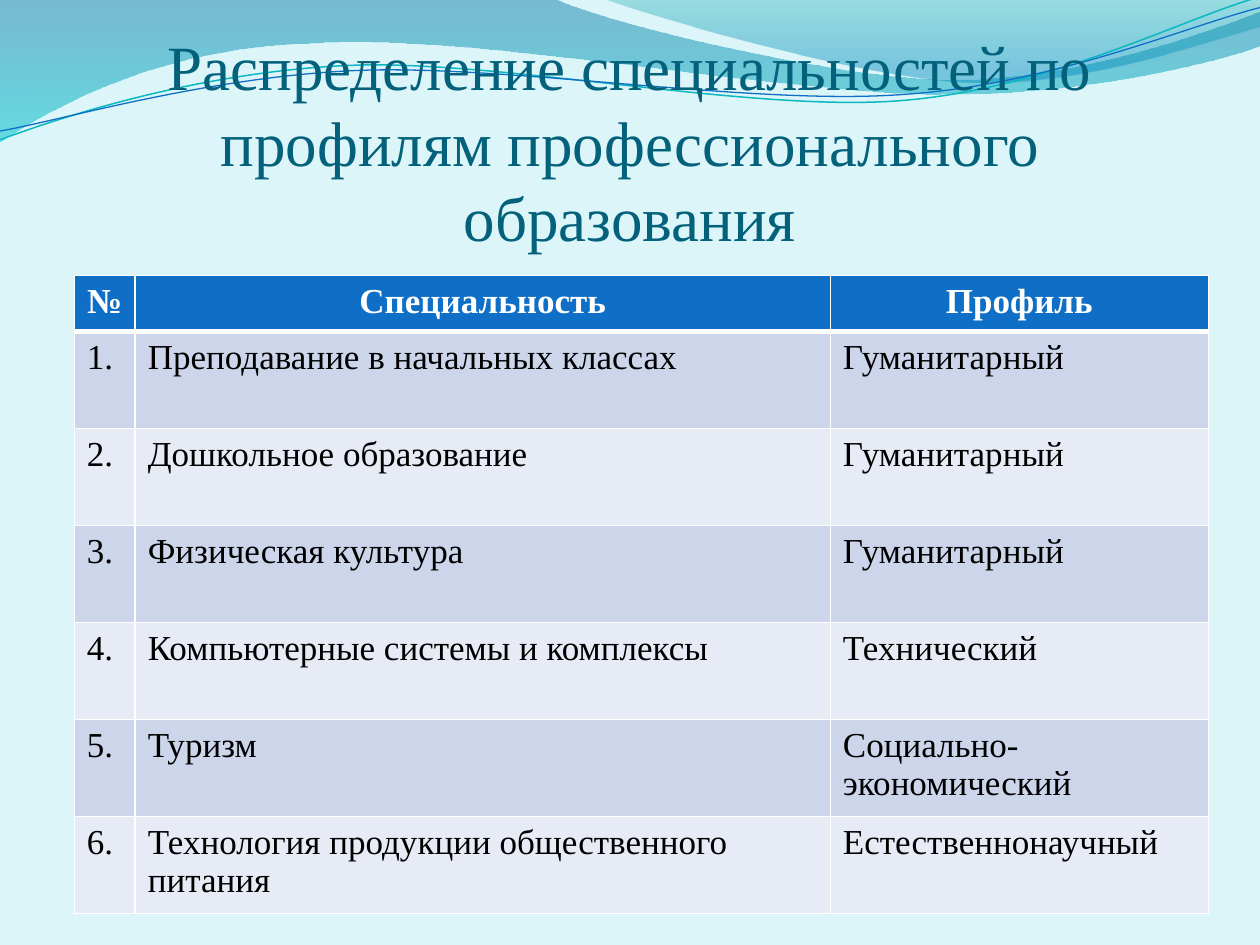
import math

import pptx
import pptx.dml.color
import pptx.enum.text
import pptx.oxml
import pptx.oxml.ns
import pptx.util

Pt = pptx.util.Pt
PP = pptx.enum.text.PP_ALIGN
FONT = "Times New Roman"
COLORS = {
    "background": "DBF5F9", "title": "04617B", "header": "0F6FC6",
    "odd": "CCD5EA", "even": "E7EBF5", "white": "FFFFFF", "text": "000000",
    "teal line": "0AB8BF", "blue line": "0F6FC6",
}
NS = pptx.oxml.ns.nsdecls("a")
TILT = -2.7  # degrees, of the line waves

# Waves, in points: box, then steps: a pair is a straight step, a triple of
# pairs a cubic curve. Filled waves end with stops (position %, colour, opacity %).
FILLED_WAVES = [
    ((-0.7, -0.7, 721.4, 82.1),
     [(0, 0), (316.8, -0.7),
      ((342.7, 12.2), (478.1, 45.4), (545.8, 45.4)),
      ((614.2, 45.4), (689.8, 18.7), (720, 6.5)),
      (720.7, 25.9),
      ((707.8, 31.7), (626.4, 54.7), (537.1, 54)),
      ((447.8, 54), (275, 20.2), (185, 24.5)),
      ((92.9, 25.9), (33.1, 59.8), (-0.7, 81.4)),
      (0, 0)],
     [(0, "0074A1", 45), (100, "00C6CF", 55)]),
    ((344.9, -0.7, 375.1, 50.4),
     [(344.9, -0.7),
      ((366.5, 7.9), (491, 44.6), (553.7, 46.8)),
      ((616.3, 49.7), (691.9, 23), (720, 15.1)),
      (720, 0), (344.9, -0.7)],
     [(0, "00A1A9", 30), (80, "008BBF", 45)]),
]
LINE_WAVES = [
    ((-1.4, 15.8, 721.4, 51.1),
     [(0, 79.9),
      ((34.6, 67), (113.8, 41), (199.4, 37.4)),
      ((284.4, 33.8), (427, 64.1), (513.4, 57.6)),
      ((599.8, 51.1), (675.4, 10.8), (718.6, -1.4))], "teal line", 0.85),
    ((-1.4, 21.6, 722.2, 41.8),
     [(0, 74.9),
      ((33.8, 69.1), (118.1, 43.9), (203.8, 40.3)),
      ((290.2, 36.7), (429.8, 60.5), (516.2, 54)),
      ((601.9, 48.2), (677.5, 15.1), (720, 4.3))], "blue line", 0.75),
]

TITLE = "Распределение специальностей по профилям профессионального образования"
HEADERS = ["№", "Специальность", "Профиль"]
SPECIALTIES = [
    ("Преподавание в начальных классах", "Гуманитарный"),
    ("Дошкольное образование", "Гуманитарный"),
    ("Физическая культура", "Гуманитарный"),
    ("Компьютерные системы и комплексы", "Технический"),
    ("Туризм", "Социально-экономический"),
    ("Технология продукции общественного питания", "Естественнонаучный"),
]


def rgb(name):
    return pptx.dml.color.RGBColor.from_string(COLORS[name])


def set_font(p, size, color, bold=False):
    p.font.name, p.font.size, p.font.bold = FONT, Pt(size), bold
    p.font.color.rgb = rgb(color)


def add_wave(slide, left, top, box, steps, tilt=0, close=False):
    """Frame the wave with its box, then give the outline its true curves."""
    x, y, width, height = box
    x0, y0, x1, y1 = (Pt(v) for v in (left + x, top + y, left + x + width, top + y + height))
    builder = slide.shapes.build_freeform(x0, y0)
    builder.add_line_segments([(x1, y0), (x1, y1), (x0, y1)])
    sp = builder.convert_to_shape()
    sp.shadow.inherit = False
    sp.rotation = tilt % 360
    cos, sin = math.cos(math.radians(-tilt)), math.sin(math.radians(-tilt))

    def local(point):
        dx, dy = point[0] - x - width / 2, point[1] - y - height / 2
        px = Pt(dx * cos - dy * sin + width / 2)
        py = Pt(dx * sin + dy * cos + height / 2)
        return f'<a:pt x="{px}" y="{py}"/>'

    outline = next(sp.element.iter(pptx.oxml.ns.qn("a:path")))
    for child in list(outline):
        outline.remove(child)
    for i, step in enumerate(steps):
        curved = len(step) == 3
        tag = "moveTo" if i == 0 else "cubicBezTo" if curved else "lnTo"
        pts = "".join(local(pt) for pt in (step if curved else [step]))
        outline.append(pptx.oxml.parse_xml(f"<a:{tag} {NS}>{pts}</a:{tag}>"))
    if close:
        outline.append(pptx.oxml.parse_xml(f"<a:close {NS}/>"))
    return sp


def add_waves(slide, left, top):
    for box, steps, stops in FILLED_WAVES:
        sp = add_wave(slide, left, top, box, steps, close=True)
        sp.line.fill.background()
        gs = "".join(
            f'<a:gs pos="{pos * 1000}"><a:srgbClr val="{color}">'
            f'<a:alpha val="{alpha * 1000}"/></a:srgbClr></a:gs>'
            for pos, color, alpha in stops)
        sp.fill.background()
        no_fill = sp.element.spPr.find(pptx.oxml.ns.qn("a:noFill"))
        sp.element.spPr.replace(no_fill, pptx.oxml.parse_xml(
            f'<a:gradFill {NS}><a:gsLst>{gs}</a:gsLst>'
            f'<a:lin ang="5400000" scaled="0"/></a:gradFill>'))
    for box, steps, color, width in LINE_WAVES:
        sp = add_wave(slide, left, top, box, steps, tilt=TILT)
        sp.fill.background()
        sp.line.color.rgb = rgb(color)
        sp.line.width = Pt(width)


def add_title(slide, left, top, width, height):
    tf = slide.shapes.add_textbox(Pt(left), Pt(top), Pt(width), Pt(height)).text_frame
    tf.word_wrap = True
    tf.vertical_anchor = pptx.enum.text.MSO_ANCHOR.BOTTOM
    tf.margin_left = tf.margin_right = tf.margin_bottom = 0
    p = tf.paragraphs[0]
    p.text = TITLE
    p.alignment = PP.CENTER
    set_font(p, 36, "title")


def set_borders(cell, top, bottom):
    """White borders; they come before the fill in the cell properties."""
    tcPr = cell._tc.get_or_add_tcPr()
    widths = {"lnL": 1, "lnR": 1, "lnT": top, "lnB": bottom}
    for i, (side, width) in enumerate(widths.items()):
        tcPr.insert(i, pptx.oxml.parse_xml(
            f'<a:{side} {NS} w="{Pt(width)}"><a:solidFill>'
            f'<a:srgbClr val="{COLORS["white"]}"/></a:solidFill></a:{side}>'))


def add_specialties(slide, left, top, width, height):
    rows = [HEADERS] + [(f"{n}.", *row) for n, row in enumerate(SPECIALTIES, 1)]
    table = slide.shapes.add_table(
        len(rows), len(HEADERS), Pt(left), Pt(top), Pt(width), Pt(height)).table
    number_width, profile_width, header_height = 34.8, 216, 32
    widths = (number_width, width - number_width - profile_width, profile_width)
    for column, w in zip(table.columns, widths):
        column.width = Pt(w)
    for i, row in enumerate(rows):
        header = i == 0
        table.rows[i].height = Pt(
            header_height if header else (height - header_height) / len(SPECIALTIES))
        for j, text in enumerate(row):
            cell = table.cell(i, j)
            cell.fill.solid()
            cell.fill.fore_color.rgb = rgb("header" if header else "odd" if i % 2 else "even")
            set_borders(cell, 3 if i == 1 else 1, 3 if header else 1)
            p = cell.text_frame.paragraphs[0]
            p.text = text
            p.alignment = PP.CENTER if header else PP.LEFT
            set_font(p, 20, "white" if header else "text", header)


def main():
    prs = pptx.Presentation()
    prs.slide_width, prs.slide_height = Pt(720), Pt(540)
    slide = prs.slides.add_slide(prs.slide_layouts[6])
    slide.background.fill.solid()
    slide.background.fill.fore_color.rgb = rgb("background")
    add_waves(slide, 0, 0)
    add_title(slide, 36, 55.4, 648, 90)
    add_specialties(slide, 42.5, 157.5, 648, 364.6)
    prs.save("out.pptx")


if __name__ == "__main__":
    main()
